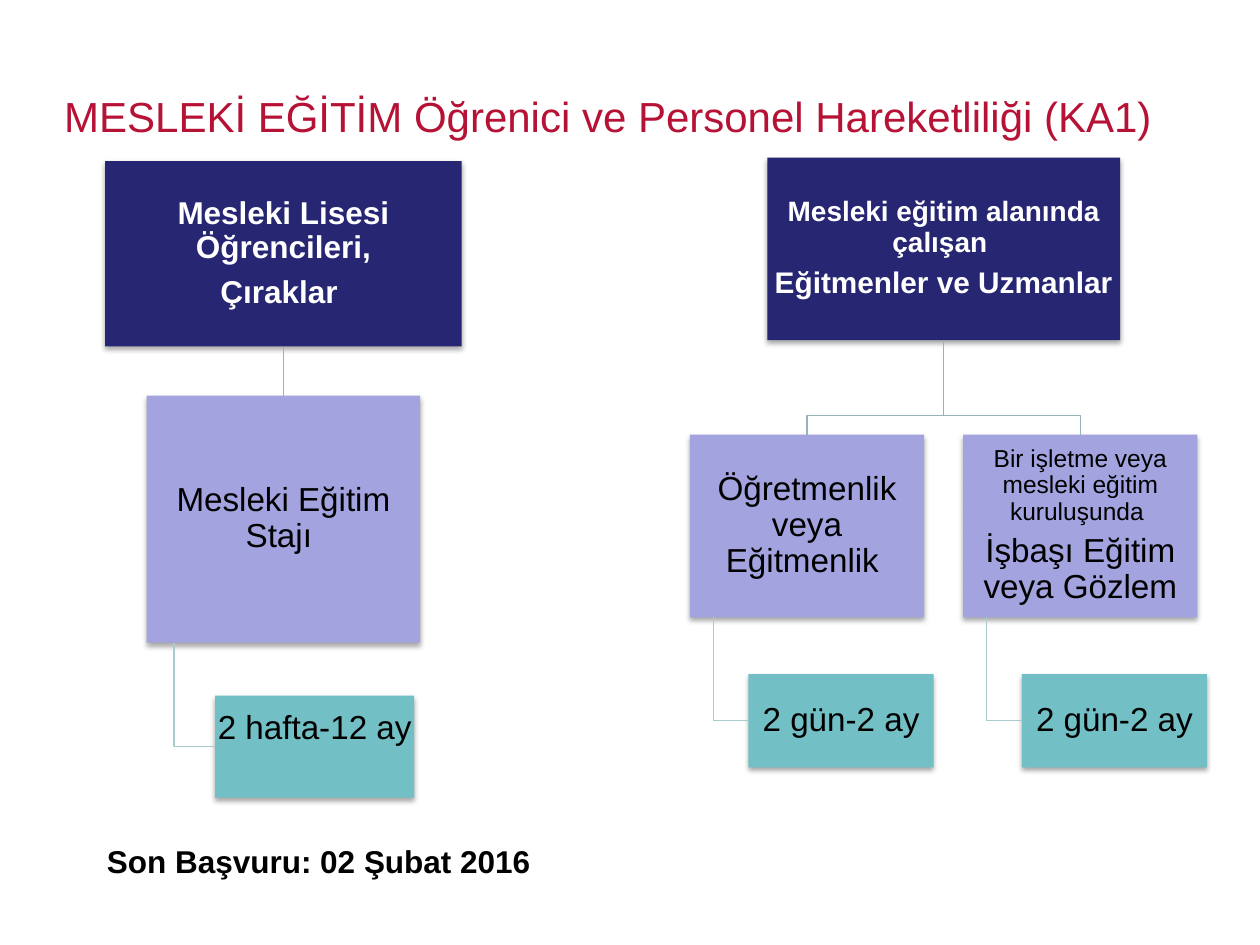
"""Build a slide with two mobility trees for vocational learners and staff."""
from lxml import etree
from pptx import Presentation
from pptx.dml.color import RGBColor
from pptx.enum.shapes import MSO_CONNECTOR, MSO_SHAPE
from pptx.enum.text import MSO_ANCHOR, PP_ALIGN
from pptx.oxml.ns import qn
from pptx.util import Inches, Pt

RECT, LINE = MSO_SHAPE.RECTANGLE, MSO_CONNECTOR.STRAIGHT
TOP, MIDDLE = MSO_ANCHOR.TOP, MSO_ANCHOR.MIDDLE
LEFT, CENTER = PP_ALIGN.LEFT, PP_ALIGN.CENTER

WIDE, HIGH = 10, 7.5
HUES = {"title": "B61235", "root": "262673", "kid": "A3A3E0", "leaf": "72BFC5",
        "light": "FFFFFF", "dark": "000000", "bus": "96B3B6", "stem": "AACBCE"}
TITLE = "MESLEKİ EĞİTİM Öğrenici ve Personel Hareketliliği (KA1)"
NOTE = "Son Başvuru: 02 Şubat 2016"
TREES = [
    {"mid": 2.25, "tops": (1.28, 3.14, 5.52), "gap": 0, "foot": 0.3,
     "sizes": ((2.83, 1.47), (2.17, 1.96), (1.58, 0.81)),
     "root": [("Mesleki Lisesi Öğrencileri,", 18), ("Çıraklar ", 18)],
     "kids": [([("Mesleki Eğitim Stajı ", 19)], [("2 hafta-12 ay", 19)])]},
    {"mid": 7.49, "tops": (1.25, 3.45, 5.35), "gap": 0.31, "foot": 0.01,
     "sizes": ((2.8, 1.45), (1.86, 1.45), (1.47, 0.74)),
     "root": [("Mesleki eğitim alanında çalışan ", 16), ("Eğitmenler ve Uzmanlar", 17)],
     "kids": [([("Öğretmenlik veya Eğitmenlik ", 19)], [("2 gün-2 ay", 19)]),
              ([("Bir işletme veya mesleki eğitim kuruluşunda ", 14),
                ("İşbaşı Eğitim veya Gözlem", 19)], [("2 gün-2 ay", 19)])]},
]


def color(name):
    return RGBColor.from_string(HUES[name])


def assign(obj, form):
    for key, value in form.items():
        setattr(obj, key, value)


def write(shape, paras, hue, bold=False, align=LEFT, form=None):
    frame = shape.text_frame
    assign(frame, {"word_wrap": True, **(form or {})})
    for i, (text, size) in enumerate(paras):
        para = frame.add_paragraph() if i else frame.paragraphs[0]
        para.text, para.alignment = text, align
        if align == CENTER:
            assign(para, {"line_spacing": 0.9, "space_after": Pt(round(size * 0.35, 1))})
        assign(para.font, {"name": "Arial", "size": Pt(size), "bold": bold})
        para.font.color.rgb = color(hue)


def effects(shape):
    return etree.SubElement(shape._element.spPr, qn("a:effectLst"))


def shade(shape):
    drop = etree.SubElement(effects(shape), qn("a:outerShdw"), blurRad=str(Pt(3.1)),
                            dist=str(Pt(1.8)), dir="5400000", rotWithShape="0")
    black = etree.SubElement(drop, qn("a:srgbClr"), val=HUES["dark"])
    etree.SubElement(black, qn("a:alpha"), val="35000")


def add_box(shapes, kind, x, y, size, paras, foot=0.01):
    box = shapes.add_shape(RECT, *map(Inches, (x, y, *size)))
    box.fill.solid()
    box.fill.fore_color.rgb = color(kind)
    box.line.fill.background()
    shade(box)
    pad = Inches(0.01)
    form = {"vertical_anchor": MIDDLE, "margin_left": pad, "margin_right": pad,
            "margin_top": pad, "margin_bottom": Inches(foot)}
    root = kind == "root"
    write(box, paras, "light" if root else "dark", root, CENTER, form)
    return box


def ink(shape, hue):
    shape.line.color.rgb = color(hue)
    shape.line.width = Pt(0.75)


def add_bend(shapes, points, hue):
    start, *rest = [tuple(map(Inches, point)) for point in points]
    pen = shapes.build_freeform(*start)
    pen.add_line_segments(rest, close=False)
    bend = pen.convert_to_shape()
    bend.fill.background()
    bend.shadow.inherit = False
    ink(bend, hue)


def add_tree(shapes, tree):
    mid, gap, tops = tree["mid"], tree["gap"], tree["tops"]
    top, row, low = tops
    big, kid, leaf = tree["sizes"]
    count = len(tree["kids"])
    root = add_box(shapes, "root", mid - big[0] / 2, top, big, tree["root"])
    first = mid - (count * kid[0] + (count - 1) * gap) / 2
    for i, (job, term) in enumerate(tree["kids"]):
        x = first + i * (kid[0] + gap)
        box = add_box(shapes, "kid", x, row, kid, job)
        edge = x + kid[0] / 4
        add_box(shapes, "leaf", edge, low, leaf, term, tree["foot"])
        stem, level = x + kid[0] / 10, low + leaf[1] / 2
        add_bend(shapes, [(stem, row + kid[1]), (stem, level), (edge, level)], "stem")
        if count == 1:
            link = shapes.add_connector(LINE, 0, 0, 0, 0)
            link.begin_connect(root, 2)
            link.end_connect(box, 0)
            ink(link, "bus")
            effects(link)
        else:
            end, bus = x + kid[0] / 2, row - 0.15
            add_bend(shapes, [(mid, top + big[1]), (mid, bus), (end, bus), (end, row)], "bus")


def main():
    deck = Presentation()
    deck.slide_width, deck.slide_height = Inches(WIDE), Inches(HIGH)
    shapes = deck.slides.add_slide(deck.slide_layouts[5]).shapes
    title = shapes.title
    assign(title, {"left": Inches(0.41), "top": Inches(0.67),
                   "width": Inches(WIDE - 2 * 0.41), "height": Inches(0.67)})
    write(title, [(TITLE, 24)], "title", form={"vertical_anchor": TOP})
    for tree in TREES:
        add_tree(shapes, tree)
    note = shapes.add_textbox(*map(Inches, (0.75, 6.63, 4.25, 0.4)))
    write(note, [(NOTE, 18)], "dark", True)
    deck.save("out.pptx")


if __name__ == "__main__":
    main()
